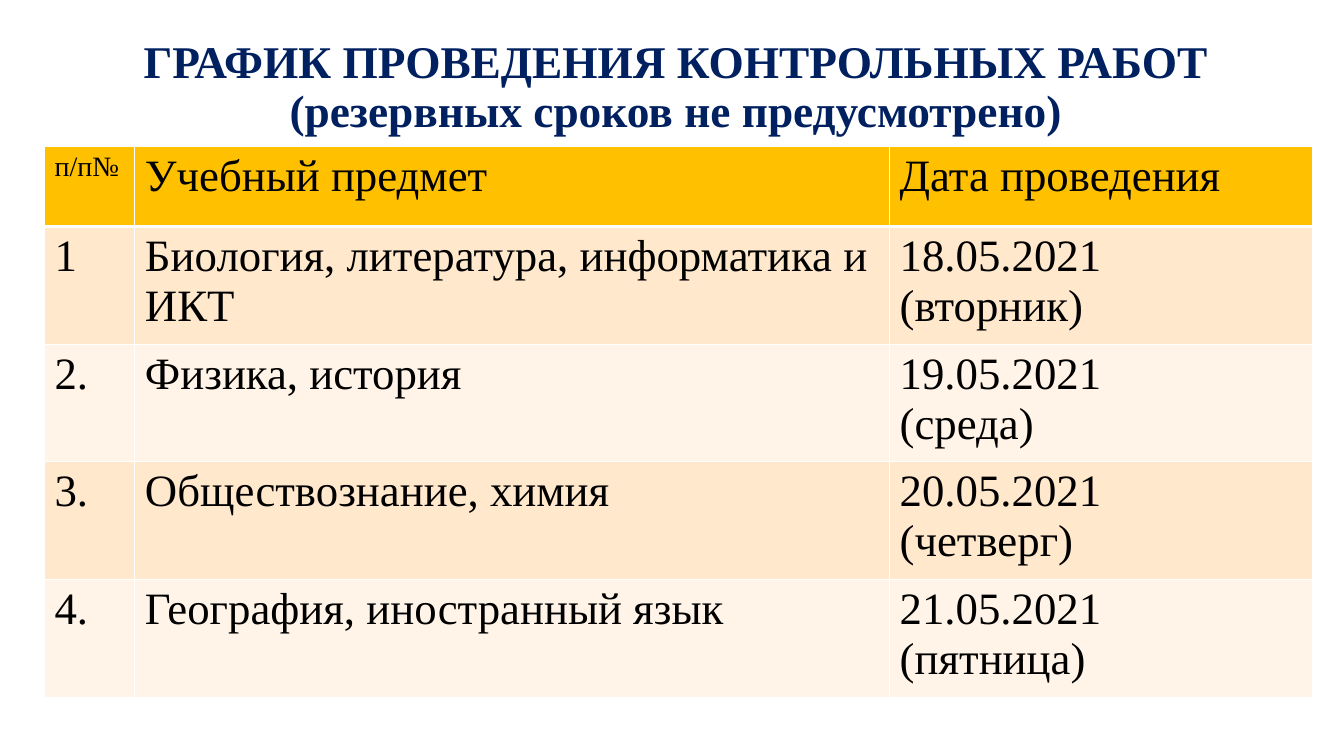
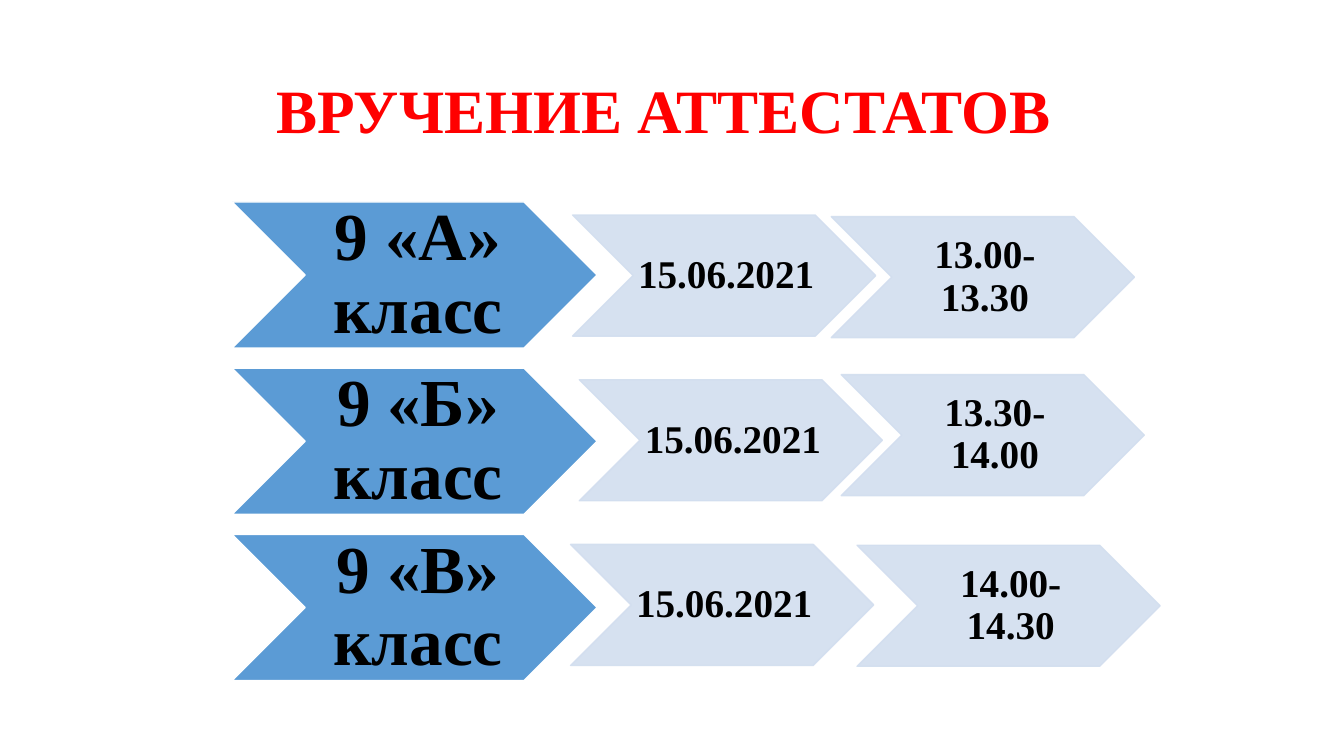
from lxml import etree
from pptx import Presentation
from pptx.dml.color import RGBColor
from pptx.enum.shapes import MSO_SHAPE
from pptx.enum.text import MSO_ANCHOR, PP_ALIGN
from pptx.oxml.ns import qn
from pptx.util import Cm, Pt

CHEVRON = MSO_SHAPE.CHEVRON
MIDDLE = MSO_ANCHOR.MIDDLE
CENTER = PP_ALIGN.CENTER
LEFT = PP_ALIGN.LEFT

FONT = "Times New Roman"
COLORS = {
    "navy": "002060",
    "red": "FF0000",
    "black": "000000",
    "white": "FFFFFF",
    "header": "FFC000",
    "odd": "FFE8CC",
    "even": "FFF4E7",
    "class": "5B9BD5",
    "detail": "D2DEEF",
}

SCHEDULE_TITLE = "ГРАФИК ПРОВЕДЕНИЯ КОНТРОЛЬНЫХ РАБОТ\v(резервных сроков не предусмотрено)"
SCHEDULE = [
    ("п/п№", "Учебный предмет", "Дата проведения"),
    ("1", "Биология, литература, информатика и ИКТ", "18.05.2021\n(вторник)"),
    ("2.", "Физика, история", "19.05.2021\n(среда)"),
    ("3.", "Обществознание, химия", "20.05.2021\n(четверг)"),
    ("4.", "География, иностранный язык", "21.05.2021\n(пятница)"),
]
COLUMN_WIDTHS = (2.28, 19.02, 10.67)
HEADER_HEIGHT, ROW_HEIGHT = 2.03, 2.64

AWARD_TITLE = "ВРУЧЕНИЕ АТТЕСТАТОВ "
AWARDS = [
    ("9 «А» класс", ("15.06.2021", 14.43, 5.42), ("13.00-13.30", 20.95, 5.46)),
    ("9 «Б» класс", ("15.06.2021", 14.6, 9.57), ("13.30-14.00", 21.2, 9.44)),
    ("9 «В» класс", ("15.06.2021", 14.38, 13.72), ("14.00-14.30", 21.6, 13.74)),
]
CLASS_LEFT, CLASS_TOP, CLASS_STEP = 5.85, 5.09, 4.19
CLASS_SIZE = (9.2, 3.68)
DETAIL_SIZE = (7.64, 3.05)


def rgb(name):
    return RGBColor.from_string(COLORS[name])


def write(frame, text, size, color="black", bold=False, align=LEFT, spacing=None):
    frame.text = text
    frame.word_wrap = True
    for para in frame.paragraphs:
        para.alignment = align
        if spacing:
            para.line_spacing = spacing
        for span in para.runs:
            span.font.name = FONT
            span.font.size = Pt(size)
            span.font.bold = bold
            span.font.color.rgb = rgb(color)


def add_title(page, text, left, top, width, height, size, color):
    box = page.shapes.add_textbox(Cm(left), Cm(top), Cm(width), Cm(height))
    box.text_frame.vertical_anchor = MIDDLE
    write(box.text_frame, text, size, color, bold=True, align=CENTER, spacing=0.9)


def set_borders(cell, bottom):
    properties = cell._tc.get_or_add_tcPr()
    for index, side in enumerate(("lnL", "lnR", "lnT", "lnB")):
        width = bottom if side == "lnB" else 1
        line = etree.Element(qn(f"a:{side}"), w=str(Pt(width)))
        fill = etree.SubElement(line, qn("a:solidFill"))
        etree.SubElement(fill, qn("a:srgbClr"), val=COLORS["white"])
        properties.insert(index, line)


def add_schedule(page):
    height = HEADER_HEIGHT + ROW_HEIGHT * (len(SCHEDULE) - 1)
    table = page.shapes.add_table(
        len(SCHEDULE), len(COLUMN_WIDTHS),
        Cm(1.12), Cm(3.68), Cm(sum(COLUMN_WIDTHS)), Cm(height),
    ).table
    for column, width in zip(table.columns, COLUMN_WIDTHS):
        column.width = Cm(width)
    for row, values in enumerate(SCHEDULE):
        is_header = row == 0
        table.rows[row].height = Cm(HEADER_HEIGHT if is_header else ROW_HEIGHT)
        fill = "header" if is_header else ("even", "odd")[row % 2]
        for column, text in enumerate(values):
            cell = table.cell(row, column)
            cell.fill.solid()
            cell.fill.fore_color.rgb = rgb(fill)
            set_borders(cell, bottom=3 if is_header else 1)
            write(cell.text_frame, text, 20 if is_header and column == 0 else 32)


def add_chevron(page, text, left, top, dimensions, fill, line, size, inset, alpha=None):
    width, height = dimensions
    shape = page.shapes.add_shape(CHEVRON, Cm(left), Cm(top), Cm(width), Cm(height))
    shape.shadow.inherit = False
    shape.fill.solid()
    shape.fill.fore_color.rgb = rgb(fill)
    shape.line.color.rgb = rgb(line)
    shape.line.width = Pt(1)
    if alpha:
        for color in shape._element.spPr.iter(qn("a:srgbClr")):
            etree.SubElement(color, qn("a:alpha"), val=str(alpha * 1000))
    frame = shape.text_frame
    frame.vertical_anchor = MIDDLE
    frame.margin_left, frame.margin_right = Cm(inset), 0
    frame.margin_top = frame.margin_bottom = Cm(inset / 2)
    write(frame, text, size, bold=True, align=CENTER, spacing=0.9)


def add_awards(page):
    for row, (name, *details) in enumerate(AWARDS):
        add_chevron(page, name, CLASS_LEFT, CLASS_TOP + row * CLASS_STEP, CLASS_SIZE,
                    "class", "white", size=48, inset=0.17)
        for text, left, top in details:
            add_chevron(page, text, left, top, DETAIL_SIZE,
                        "detail", "detail", size=28, inset=0.1, alpha=90)


def main():
    deck = Presentation()
    deck.slide_width, deck.slide_height = Cm(33.87), Cm(19.05)
    blank = deck.slide_layouts[6]

    page = deck.slides.add_slide(blank)
    add_title(page, SCHEDULE_TITLE, 1.5, 1.02, 31.06, 2.39, size=32.4, color="navy")
    add_schedule(page)

    page = deck.slides.add_slide(blank)
    add_title(page, AWARD_TITLE, 2.33, 1.02, 29.21, 3.68, size=44, color="red")
    add_awards(page)

    deck.save("out.pptx")


if __name__ == "__main__":
    main()
